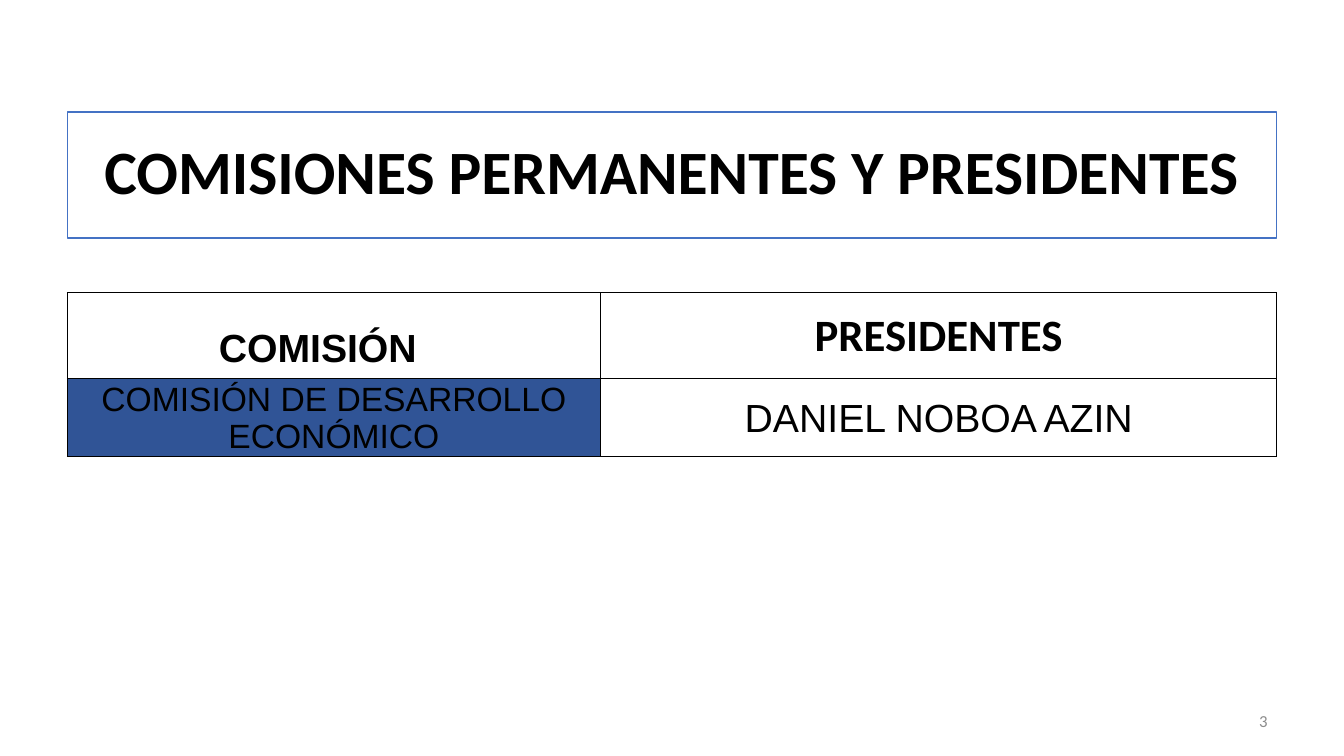
from lxml import etree
from pptx import Presentation
from pptx import util as u
from pptx.dml.color import RGBColor
from pptx.enum import text
from pptx.oxml import ns

W, H = 13.33, 7.5
COLORS = {"white": "FFFFFF", "black": "000000", "outline": "4472C4",
          "band": "305496", "number": "8C8C8C"}
BODY_LEFT, BODY_WIDTH = 0.05 * W, 0.9 * W

# Text, font, size, bold for each cell
ROWS = [
    [("COMISIÓN", "Arial", 28, True), ("PRESIDENTES", "Calibri", 32, True)],
    [("COMISIÓN DE DESARROLLO ECONÓMICO", "Arial", 24, False),
     ("DANIEL NOBOA AZIN", "Arial", 28, False)],
]
COLUMN_SHARES = [0.441, 0.559]
ROW_HEIGHTS = [0.85, 0.77]


def rgb(name):
    return RGBColor.from_string(COLORS[name])


def write(tf, words, font, size, bold=False, color="black",
          align=text.PP_ALIGN.CENTER):
    tf.text = words
    p = tf.paragraphs[0]
    p.alignment = align
    f = p.runs[0].font
    f.name, f.size, f.bold = font, u.Pt(size), bold
    f.color.rgb = rgb(color)
    return p


def add_title(slide, x, y, w, h):
    sp = slide.shapes.title
    sp.left, sp.top, sp.width, sp.height = map(u.Inches, (x, y, w, h))
    sp.fill.solid()
    sp.fill.fore_color.rgb = rgb("white")
    sp.line.color.rgb = rgb("outline")
    sp.line.width = u.Pt(1)
    tf = sp.text_frame
    tf.auto_size = text.MSO_AUTO_SIZE.NONE
    tf.vertical_anchor = text.MSO_ANCHOR.MIDDLE
    p = write(tf, "COMISIONES PERMANENTES Y PRESIDENTES", "Calibri", 44, True)
    p.line_spacing = 0.9


def add_borders(cell):
    tc_pr = cell._tc.get_or_add_tcPr()
    for i, side in enumerate(("lnL", "lnR", "lnT", "lnB")):
        ln = etree.Element(ns.qn("a:" + side), w=str(u.Pt(0.5)))
        fill = etree.SubElement(ln, ns.qn("a:solidFill"))
        etree.SubElement(fill, ns.qn("a:srgbClr"), val=COLORS["black"])
        tc_pr.insert(i, ln)


def add_committees(slide, x, y, w):
    frame = slide.shapes.add_table(len(ROWS), len(COLUMN_SHARES), u.Inches(x),
                                   u.Inches(y), u.Inches(w),
                                   u.Inches(sum(ROW_HEIGHTS)))
    table = frame.table
    for column, share in zip(table.columns, COLUMN_SHARES):
        column.width = u.Inches(w * share)
    for row, height, entries in zip(table.rows, ROW_HEIGHTS, ROWS):
        row.height = u.Inches(height)
        for cell, entry in zip(row.cells, entries):
            cell.margin_left = cell.margin_right = cell.margin_top = u.Inches(0.03)
            cell.margin_bottom = 0
            cell.vertical_anchor = text.MSO_ANCHOR.MIDDLE
            cell.fill.solid()
            cell.fill.fore_color.rgb = rgb("white")
            write(cell.text_frame, *entry)
            add_borders(cell)
    # The first heading sits low and left; the committee cell is blue
    heading = table.cell(0, 0)
    heading.vertical_anchor = text.MSO_ANCHOR.BOTTOM
    heading.margin_right, heading.margin_bottom = u.Inches(0.35), u.Inches(0.07)
    table.cell(1, 0).fill.fore_color.rgb = rgb("band")


def add_number(slide, x, y, w, h):
    tf = slide.shapes.add_textbox(*map(u.Inches, (x, y, w, h))).text_frame
    tf.word_wrap = True
    tf.vertical_anchor = text.MSO_ANCHOR.MIDDLE
    p = write(tf, "3", "Calibri", 12, color="number", align=text.PP_ALIGN.RIGHT)
    p.space_after = u.Pt(6)


def main():
    prs = Presentation()
    prs.slide_width, prs.slide_height = u.Inches(W), u.Inches(H)
    slide = prs.slides.add_slide(prs.slide_layouts[5])
    add_title(slide, BODY_LEFT, 1.11, BODY_WIDTH, H / 6)
    add_committees(slide, BODY_LEFT, 2.9, BODY_WIDTH)
    add_number(slide, 9.56, 6.95, 3.11, 0.4)
    prs.save("out.pptx")


if __name__ == "__main__":
    main()
